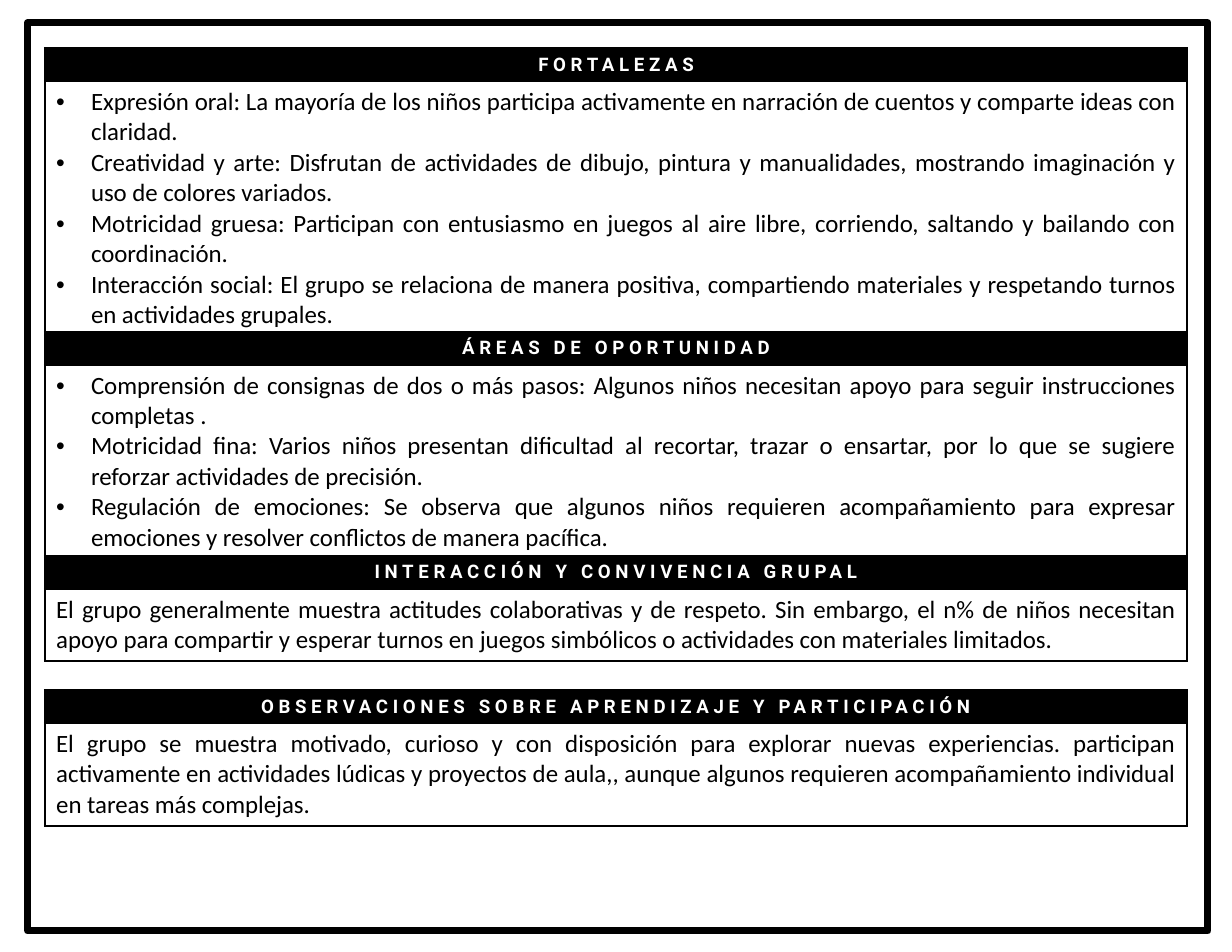
from dataclasses import dataclass

from lxml.etree import SubElement
from pptx import Presentation
from pptx.dml.color import RGBColor
from pptx.enum.shapes import MSO_SHAPE
from pptx.enum.text import PP_ALIGN
from pptx.oxml import parse_xml
from pptx.oxml.ns import nsdecls, qn
from pptx.slide import Slide
from pptx.table import _Cell
from pptx.text.text import _Paragraph
from pptx.util import Cm, Pt

BLACK = "000000"
WHITE = "FFFFFF"
TABLE_LEFT = 1.02
TABLE_TOP = 1.09
TABLE_WIDTH = 25.91
HEADER_HEIGHT = 0.74
BODY_HEIGHT = 1.04
BULLET_INDENT = 0.79


@dataclass(frozen=True)
class Section:
    heading: str
    height: float
    lines: tuple[str, ...]
    bulleted: bool = False


SECTIONS = (
    Section("FORTALEZAS", 6.43, (
        "Expresión oral: La mayoría de los niños participa activamente en narración "
        "de cuentos y comparte ideas con claridad.",
        "Creatividad y arte: Disfrutan de actividades de dibujo, pintura y "
        "manualidades, mostrando imaginación y uso de colores variados.",
        "Motricidad gruesa: Participan con entusiasmo en juegos al aire libre, "
        "corriendo, saltando y bailando con coordinación.",
        "Interacción social: El grupo se relaciona de manera positiva, compartiendo "
        "materiales y respetando turnos en actividades grupales.",
    ), bulleted=True),
    Section("ÁREAS DE OPORTUNIDAD", 5.08, (
        "Comprensión de consignas de dos o más pasos: Algunos niños necesitan apoyo "
        "para seguir instrucciones completas .",
        "Motricidad fina: Varios niños presentan dificultad al recortar, trazar o "
        "ensartar, por lo que se sugiere reforzar actividades de precisión.",
        "Regulación de emociones: Se observa que algunos niños requieren "
        "acompañamiento para expresar emociones y resolver conflictos de manera pacífica.",
    ), bulleted=True),
    Section("INTERACCIÓN Y CONVIVENCIA GRUPAL", 3.05, (
        "El grupo generalmente muestra actitudes colaborativas y de respeto. Sin "
        "embargo, el n% de niños necesitan apoyo para compartir y esperar turnos en "
        "juegos simbólicos o actividades con materiales limitados.",
    )),
    Section("OBSERVACIONES SOBRE APRENDIZAJE Y PARTICIPACIÓN", 3.05, (
        "El grupo se muestra motivado, curioso y con disposición para explorar nuevas "
        "experiencias. participan activamente en actividades lúdicas y proyectos de "
        "aula,, aunque algunos requieren acompañamiento individual en tareas más complejas.",
    )),
)


def color(value: str) -> RGBColor:
    return RGBColor.from_string(value)


def write(paragraph: _Paragraph, text: str, *, font: str, size: float, fill: str,
          align: PP_ALIGN, bold: bool = False, spacing: float = 0,
          bulleted: bool = False) -> None:
    """Fill a paragraph with one formatted run; spacing is in points."""
    paragraph.alignment = align
    run = paragraph.add_run()
    run.text = text
    run.font.name = font
    run.font.size = Pt(size)
    run.font.bold = bold
    run.font.color.rgb = color(fill)
    run.font._element.set("spc", str(round(spacing * 100)))
    if bulleted:
        properties = paragraph._p.get_or_add_pPr()
        properties.set("marL", str(Cm(BULLET_INDENT)))
        properties.set("indent", str(-Cm(BULLET_INDENT)))
        SubElement(properties, qn("a:buFont"), typeface="Arial")
        SubElement(properties, qn("a:buChar"), char="•")


def style_cell(cell: _Cell, fill: str) -> None:
    """Give a cell a solid fill and a black border on all sides."""
    cell.fill.solid()
    cell.fill.fore_color.rgb = color(fill)
    properties = cell._tc.get_or_add_tcPr()
    for position, side in enumerate(("lnL", "lnR", "lnT", "lnB")):
        properties.insert(position, parse_xml(
            f'<a:{side} {nsdecls("a")} w="{Pt(1.5)}"><a:solidFill>'
            f'<a:srgbClr val="{BLACK}"/></a:solidFill></a:{side}>'))


def add_page_frame(slide: Slide) -> None:
    frame = slide.shapes.add_shape(
        MSO_SHAPE.RECTANGLE, Cm(3.71), Cm(-2.57), Cm(20.6), Cm(26.77))
    frame.rotation = 90
    frame.shadow.inherit = False
    frame.fill.background()
    frame.line.color.rgb = color(BLACK)
    frame.line.width = Pt(4.5)


def add_section(slide: Slide, section: Section, top: float) -> None:
    graphic_frame = slide.shapes.add_table(
        2, 1, Cm(TABLE_LEFT), Cm(top), Cm(TABLE_WIDTH), Cm(section.height))
    table = graphic_frame.table
    table.first_row = False
    table.horz_banding = False
    table.rows[0].height = Cm(HEADER_HEIGHT)
    table.rows[1].height = Cm(BODY_HEIGHT)
    graphic_frame.height = Cm(section.height)

    header, body = table.cell(0, 0), table.cell(1, 0)
    style_cell(header, BLACK)
    write(header.text_frame.paragraphs[0], section.heading, font="Roboto", size=12,
          fill=WHITE, align=PP_ALIGN.CENTER, bold=True, spacing=3)

    style_cell(body, WHITE)
    for index, line in enumerate(section.lines):
        text_frame = body.text_frame
        paragraph = text_frame.add_paragraph() if index else text_frame.paragraphs[0]
        write(paragraph, line, font="Calibri", size=16, fill=BLACK,
              align=PP_ALIGN.JUSTIFY, bulleted=section.bulleted)


def main() -> None:
    presentation = Presentation()
    presentation.slide_width = Cm(27.94)
    presentation.slide_height = Cm(21.59)
    slide = presentation.slides.add_slide(presentation.slide_layouts[6])

    add_page_frame(slide)
    top = TABLE_TOP
    for section in SECTIONS:
        add_section(slide, section, top)
        top += section.height

    presentation.save("out.pptx")


if __name__ == "__main__":
    main()
